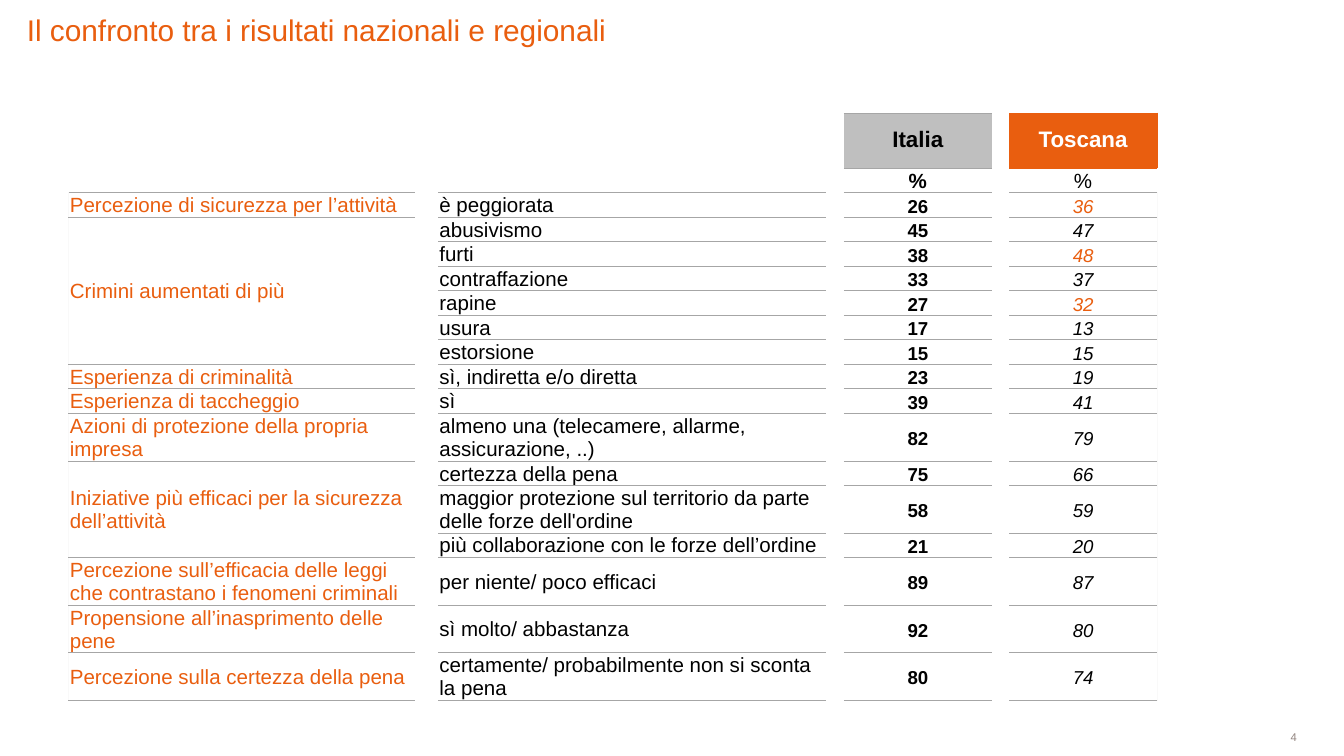
from lxml import etree
from pptx import Presentation
from pptx.dml.color import RGBColor
from pptx.enum.shapes import MSO_SHAPE
from pptx.enum.text import MSO_ANCHOR, PP_ALIGN
from pptx.oxml.ns import qn
from pptx.util import Inches, Pt

RECTANGLE = MSO_SHAPE.RECTANGLE
MIDDLE, BOTTOM = MSO_ANCHOR.MIDDLE, MSO_ANCHOR.BOTTOM
LEFT, CENTER, RIGHT = PP_ALIGN.LEFT, PP_ALIGN.CENTER, PP_ALIGN.RIGHT

ORANGE = RGBColor(0xE9, 0x5E, 0x0F)
BLACK = RGBColor(0, 0, 0)
WHITE = RGBColor(0xFF, 0xFF, 0xFF)
SILVER = RGBColor(0xBF, 0xBF, 0xBF)
RULE = RGBColor(0xA6, 0xA6, 0xA6)
PALE = RGBColor(0xF9, 0xF9, 0xF9)
TAUPE = RGBColor(0x92, 0x85, 0x80)

PLAIN_TABLE = "{2D5ABB26-0587-4C30-8999-92F81FD0307C}"
COLUMN_WIDTHS = [2.58, 0.17, 2.89, 0.13, 1.1, 0.13, 1.1]
LABEL, ANSWER, ITALY, TUSCANY = 0, 2, 4, 6
HEADER_HEIGHT, ONE_LINE, TWO_LINES, TIGHT_LINES = Pt(29.6), Pt(13.15), Pt(25.7), Pt(25.3)
LINE_SPACING = Pt(12.3)
FIRST_DATA_ROW = 2
CRIMES = "Crimini aumentati di più"
HIGHLIGHTED = ("è peggiorata", "furti", "rapine")

TOPICS = [
    ("Percezione di sicurezza per l’attività", [("è peggiorata", 26, 36, ONE_LINE)]),
    (CRIMES, [
        ("abusivismo", 45, 47, ONE_LINE),
        ("furti", 38, 48, ONE_LINE),
        ("contraffazione", 33, 37, ONE_LINE),
        ("rapine", 27, 32, ONE_LINE),
        ("usura", 17, 13, ONE_LINE),
        ("estorsione", 15, 15, ONE_LINE),
    ]),
    ("Esperienza di criminalità", [("sì, indiretta e/o diretta", 23, 19, ONE_LINE)]),
    ("Esperienza di taccheggio", [("sì", 39, 41, ONE_LINE)]),
    ("Azioni di protezione della propria impresa", [
        ("almeno una (telecamere, allarme, assicurazione, ..)", 82, 79, TWO_LINES),
    ]),
    ("Iniziative più efficaci per la sicurezza dell’attività", [
        ("certezza della pena", 75, 66, ONE_LINE),
        ("maggior protezione sul territorio da parte delle forze dell'ordine", 58, 59,
         TIGHT_LINES),
        ("più collaborazione con le forze dell’ordine", 21, 20, ONE_LINE),
    ]),
    ("Percezione sull’efficacia delle leggi che contrastano i fenomeni criminali", [
        ("per niente/ poco efficaci", 89, 87, TWO_LINES),
    ]),
    ("Propensione all’inasprimento delle pene", [
        ("sì molto/ abbastanza", 92, 80, TIGHT_LINES),
    ]),
    ("Percezione sulla certezza della pena", [
        ("certamente/ probabilmente non si sconta la pena", 80, 74, TWO_LINES),
    ]),
]


def write_text(frame, text, size=11, color=BLACK, bold=False, italic=False,
               align=LEFT, font="Arial", spacing=None):
    para = frame.paragraphs[0]
    para.alignment = align
    if spacing:
        para.line_spacing = spacing
    span = para.add_run()
    span.text = text
    span.font.name = font
    span.font.size = Pt(size)
    span.font.color.rgb = color
    span.font.bold = bold
    span.font.italic = italic


class SlideBuilder:
    def __init__(self, page):
        self.page = page

    def prepare_frame(self, frame, anchor):
        frame.margin_left = frame.margin_right = 0
        frame.margin_top = frame.margin_bottom = 0
        frame.word_wrap = True
        frame.vertical_anchor = anchor

    def text_box(self, text, left, top, width, height, anchor=BOTTOM, **style):
        box = self.page.shapes.add_textbox(
            Inches(left), Inches(top), Inches(width), Inches(height))
        self.prepare_frame(box.text_frame, anchor)
        write_text(box.text_frame, text, **style)

    def rectangle(self, text, left, top, width, height, fill, **style):
        box = self.page.shapes.add_shape(
            RECTANGLE, Inches(left), Inches(top), Inches(width), Inches(height))
        box.shadow.inherit = False
        box.fill.solid()
        box.fill.fore_color.rgb = fill
        box.line.fill.background()
        self.prepare_frame(box.text_frame, MIDDLE)
        write_text(box.text_frame, text, **style)

    def table(self, left, top, widths, heights):
        frame = self.page.shapes.add_table(
            len(heights), len(widths), Inches(left), Inches(top),
            Inches(sum(widths)), sum(heights))
        table = frame.table
        table.first_row = table.horz_banding = False
        table._tbl.tblPr.find(qn("a:tableStyleId")).text = PLAIN_TABLE
        for column, width in zip(table.columns, widths):
            column.width = Inches(width)
        for row, height in zip(table.rows, heights):
            row.height = height
        return table

    def borders(self, cell, edges):
        properties = cell._tc.get_or_add_tcPr()
        for side in "LRTB":
            if side in edges:
                line = etree.SubElement(properties, qn(f"a:ln{side}"), w=str(Pt(0.25)))
                fill = etree.SubElement(line, qn("a:solidFill"))
                etree.SubElement(fill, qn("a:srgbClr"), val=str(edges[side]))

    def cell(self, cell, text="", edges=None, fill=WHITE, anchor=MIDDLE, **style):
        self.borders(cell, edges or {})
        cell.fill.solid()
        cell.fill.fore_color.rgb = fill
        cell.margin_left = cell.margin_right = cell.margin_top = Inches(0.01)
        cell.margin_bottom = 0
        cell.vertical_anchor = anchor
        if text:
            write_text(cell.text_frame, text, spacing=LINE_SPACING, **style)
        else:
            para = cell.text_frame.paragraphs[0]
            etree.SubElement(para._p, qn("a:endParaRPr"), sz="800")


def fill_headers(builder, table):
    ruled = {"T": RULE, "B": RULE}
    framed = {side: ORANGE for side in "RTB"}
    headers = {
        (0, ITALY): dict(text="Italia", edges=ruled, fill=SILVER, size=12, bold=True),
        (0, TUSCANY): dict(text="Toscana", edges=framed, fill=ORANGE, size=12,
                           color=WHITE, bold=True),
        (1, LABEL): dict(edges={"B": RULE}),
        (1, ANSWER): dict(edges={"B": RULE}),
        (1, ITALY): dict(text="%", edges=ruled, bold=True),
        (1, TUSCANY): dict(text="%", edges={"T": ORANGE, "B": RULE}),
    }
    for row in range(FIRST_DATA_ROW):
        for column in range(len(COLUMN_WIDTHS)):
            builder.cell(table.cell(row, column), align=CENTER,
                         **headers.get((row, column), {}))


def fill_topics(builder, table):
    ruled = {"T": RULE, "B": RULE}
    row = FIRST_DATA_ROW
    for topic, answers in TOPICS:
        first = row
        for answer, italy, tuscany, _ in answers:
            is_first = row == first
            builder.cell(table.cell(row, LABEL), topic if is_first else "",
                         {"L": PALE, **(ruled if is_first else {})}, color=ORANGE)
            builder.cell(table.cell(row, ANSWER), answer, ruled,
                         anchor=BOTTOM if topic == CRIMES else MIDDLE)
            builder.cell(table.cell(row, ITALY), str(italy), ruled,
                         size=10, bold=True, align=CENTER)
            builder.cell(table.cell(row, TUSCANY), str(tuscany), {**ruled, "R": PALE},
                         size=10, italic=True, align=CENTER,
                         color=ORANGE if answer in HIGHLIGHTED else BLACK)
            for gap in (1, 3, 5):
                builder.cell(table.cell(row, gap))
            row += 1
        if len(answers) > 1:
            table.cell(first, LABEL).merge(table.cell(row - 1, LABEL))


def main():
    deck = Presentation()
    deck.slide_width = Inches(10)
    deck.slide_height = deck.slide_width * 9 // 16
    builder = SlideBuilder(deck.slides.add_slide(deck.slide_layouts[6]))
    builder.rectangle("4", 8.31, 5.44, 1.34, 0.09, WHITE,
                      size=6, color=TAUPE, align=RIGHT)
    builder.text_box("Il confronto tra i risultati nazionali e regionali",
                     0.2, -0.02, 8.19, 0.37, size=16, color=ORANGE)
    heights = [HEADER_HEIGHT, ONE_LINE]
    heights += [answer[-1] for _, answers in TOPICS for answer in answers]
    table = builder.table(0.51, 0.84, COLUMN_WIDTHS, heights)
    fill_headers(builder, table)
    fill_topics(builder, table)
    deck.save("out.pptx")


if __name__ == "__main__":
    main()
